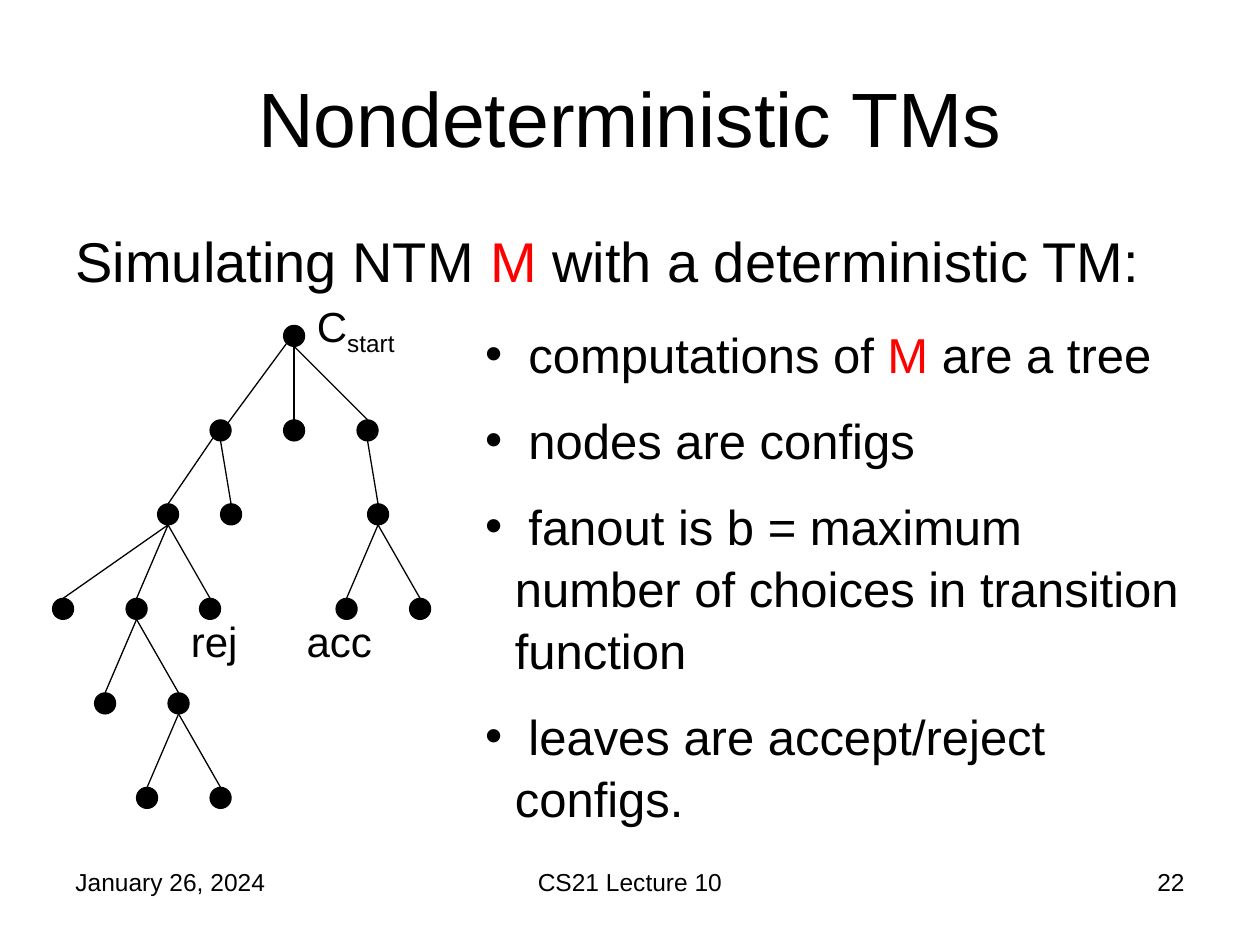
from dataclasses import dataclass

from lxml import etree
from pptx import Presentation
from pptx.dml.color import RGBColor
from pptx.enum.shapes import MSO_CONNECTOR, MSO_SHAPE
from pptx.enum.text import MSO_ANCHOR, MSO_AUTO_SIZE, PP_ALIGN
from pptx.oxml.ns import qn
from pptx.util import Cm, Pt

BLACK = RGBColor(0x00, 0x00, 0x00)
RED = RGBColor(0xFF, 0x00, 0x00)
WHITE = RGBColor(0xFF, 0xFF, 0xFF)
FONT = "Arial"

# Points on a node's rim, in radii from its centre
TOP, BOTTOM = (0, -1), (0, 1)
LOWER_LEFT, UPPER_RIGHT = (-0.71, 0.71), (0.71, -0.71)

UNIT = Cm(2.54) / 12  # tree grid step, also the node radius
LEVELS = (1, 10, 18, 27, 36, 45)  # node centres down the tree, in units


@dataclass
class Node:
    x: float
    children: tuple = ()
    entry: tuple = TOP
    exit_to_first: tuple = BOTTOM


COMPUTATION = Node(23, (
    Node(16, (
        Node(11, (
            Node(1),
            Node(8, (Node(5), Node(12, (Node(9), Node(16))))),
            Node(15),
        )),
        Node(17),
    ), entry=UPPER_RIGHT, exit_to_first=LOWER_LEFT),
    Node(23),
    Node(30, (Node(31, (Node(28), Node(35))),)),
), exit_to_first=LOWER_LEFT)


def write_text(paragraph, text, size, color=BLACK, align=PP_ALIGN.LEFT,
               before=0, spacing=None, hanging=0, bullet=None, subscript=None):
    """Write text into a paragraph; a list holds (text, color) pieces."""
    pieces = [(text, color)] if isinstance(text, str) else text
    for content, piece_color in pieces:
        run = paragraph.add_run()
        run.text = content
        run.font.name, run.font.size = FONT, Pt(size)
        run.font.color.rgb = piece_color
    if subscript:
        run = paragraph.add_run()
        run.text = subscript
        run.font.name, run.font.size = FONT, Pt(size)
        run.font.color.rgb = color
        run._r.get_or_add_rPr().set("baseline", "-25000")
    paragraph.alignment = align
    paragraph.space_before = Pt(before)
    if spacing:
        paragraph.line_spacing = spacing
    properties = paragraph._p.get_or_add_pPr()
    properties.set("marL", str(hanging))
    properties.set("indent", str(-hanging))
    if bullet:
        etree.SubElement(properties, qn("a:buFont")).set("typeface", FONT)
        etree.SubElement(properties, qn("a:buChar")).set("char", bullet)
    else:
        etree.SubElement(properties, qn("a:buNone"))


def place(shape, left, top, width, height):
    shape.left, shape.top, shape.width, shape.height = left, top, width, height
    shape.text_frame.auto_size = MSO_AUTO_SIZE.NONE
    shape.text_frame.word_wrap = True


def add_label(slide, box, text, size, **text_format):
    label = slide.shapes.add_textbox(*box)
    label.text_frame.word_wrap = True
    write_text(label.text_frame.paragraphs[0], text, size, **text_format)


def add_heading(slide, left, top, width):
    title, lead = slide.shapes.title, slide.placeholders[1]
    place(title, left, top, width, Cm(3.18))
    title.text_frame.vertical_anchor = MSO_ANCHOR.MIDDLE
    write_text(title.text_frame.paragraphs[0], "Nondeterministic TMs", 44,
               align=PP_ALIGN.CENTER)
    place(lead, left, top + Cm(3.68), width, Cm(1.69))
    write_text(lead.text_frame.paragraphs[0],
               [("Simulating NTM ", BLACK), ("M", RED),
                (" with a deterministic TM:", BLACK)],
               32, hanging=Cm(0.95))


def add_edge(slide, start, end):
    edge = slide.shapes.add_connector(
        MSO_CONNECTOR.STRAIGHT, *(round(v) for v in (*start, *end)))
    edge.line.color.rgb = BLACK
    edge.line.width = Pt(0.75)
    etree.SubElement(edge._element.spPr, qn("a:effectLst"))


def add_node(slide, node, left, top, level=0):
    """Draw a node, then its edges and subtrees."""
    def rim(which, depth, site):
        return (left + (which.x + site[0]) * UNIT,
                top + (LEVELS[depth] + site[1]) * UNIT)

    corner_x, corner_y = rim(node, level, (-1, -1))
    dot = slide.shapes.add_shape(MSO_SHAPE.OVAL, round(corner_x),
                                 round(corner_y), round(2 * UNIT), round(2 * UNIT))
    dot.shadow.inherit = False
    dot.fill.solid()
    dot.fill.fore_color.rgb = BLACK
    dot.line.color.rgb = BLACK
    dot.line.width = Pt(0.75)
    for index, child in enumerate(node.children):
        site = BOTTOM if index else node.exit_to_first
        add_edge(slide, rim(node, level, site), rim(child, level + 1, child.entry))
        add_node(slide, child, left, top, level + 1)


def add_tree(slide, left, top):
    add_node(slide, COMPUTATION, left, top)
    # Labels beside the start node and below two leaves
    for text, subscript, x, y in (("C", "start", 5.08, -0.63),
                                  ("rej", None, 2.54, 5.72),
                                  ("acc", None, 4.87, 5.72)):
        add_label(slide, (left + Cm(x), top + Cm(y), Cm(3.18), Cm(1.27)),
                  text, 24, subscript=subscript)


def add_points(slide, left, top, width, height):
    points = (
        [(" computations of ", BLACK), ("M", RED), (" are a tree", BLACK)],
        " nodes are configs",
        " fanout is b = maximum number of choices in transition function",
        " leaves are accept/reject configs.",
    )
    frame = slide.shapes.add_textbox(left, top, width, height).text_frame
    frame.word_wrap = True
    for index, point in enumerate(points):
        paragraph = frame.add_paragraph() if index else frame.paragraphs[0]
        write_text(paragraph, point, 28, before=14 if index else 0,
                   spacing=1.05, hanging=Cm(0.6), bullet="•")


def add_footer(slide, left, top, height):
    for text, offset, width, align in (
            ("January 26, 2024", 0, 5.93, PP_ALIGN.LEFT),
            ("CS21 Lecture 10", 7.41, 8.04, PP_ALIGN.CENTER),
            ("22", 16.93, 5.93, PP_ALIGN.RIGHT)):
        add_label(slide, (left + Cm(offset), top, Cm(width), height),
                  text, 14, align=align)


def main():
    deck = Presentation()
    deck.slide_width, deck.slide_height = Cm(25.4), Cm(19.05)
    slide = deck.slides.add_slide(deck.slide_layouts[1])
    slide.background.fill.solid()
    slide.background.fill.fore_color.rgb = WHITE
    add_heading(slide, Cm(1.27), Cm(0.76), Cm(22.86))
    add_tree(slide, Cm(1.06), Cm(6.56))
    add_points(slide, Cm(9.53), Cm(6.35), Cm(14.6), Cm(10.34))
    add_footer(slide, Cm(1.27), Cm(17.35), Cm(1.32))
    deck.save("out.pptx")


if __name__ == "__main__":
    main()
